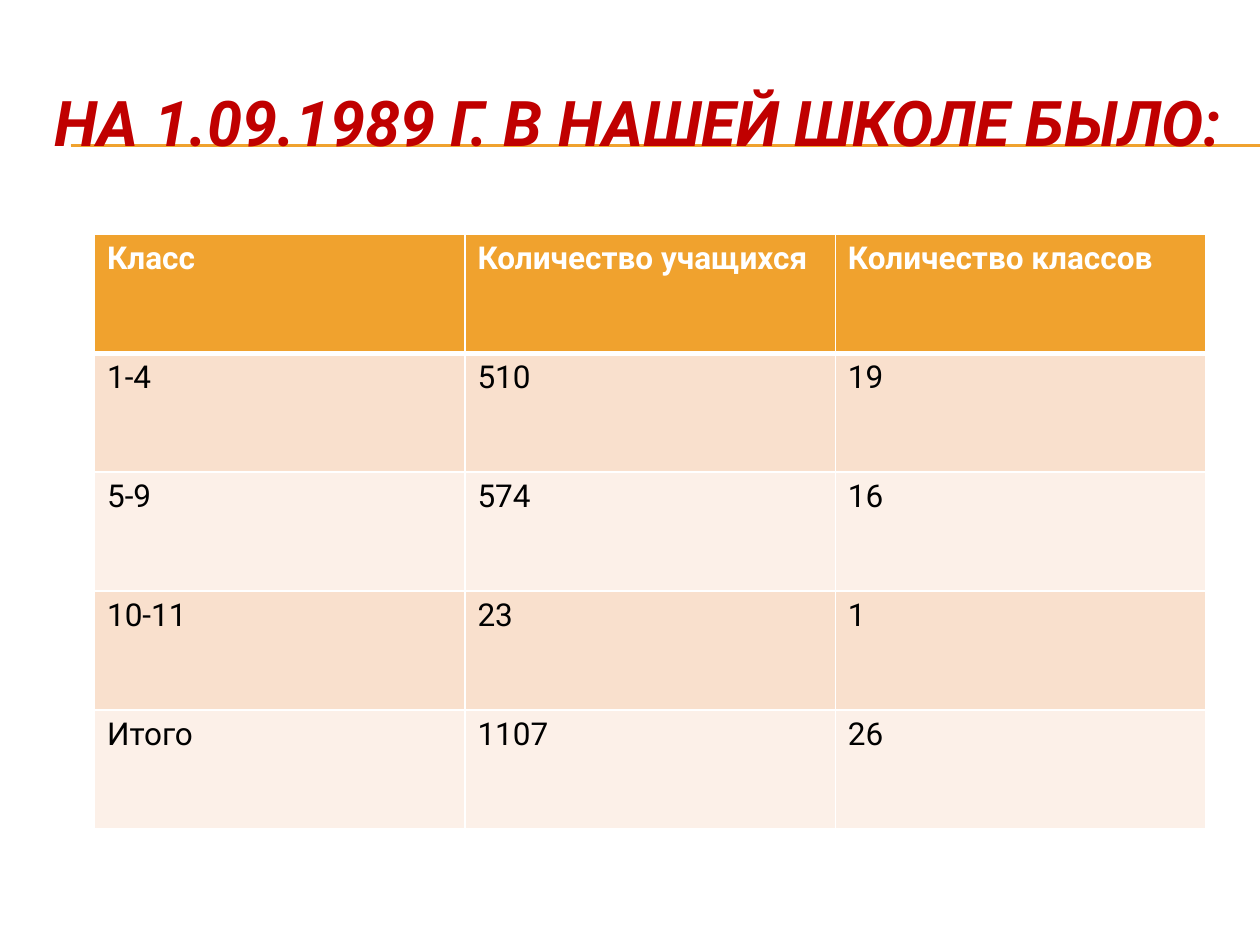
from lxml.etree import SubElement
from pptx import Presentation
from pptx.dml.color import RGBColor as RGB
from pptx.enum.shapes import MSO_CONNECTOR as CONN
from pptx.enum.text import MSO_ANCHOR as ANCHOR, PP_ALIGN as ALIGN
from pptx.oxml.ns import qn
from pptx.util import Inches, Pt

COLORS = {"accent": "F0A22E", "title": "C00000", "white": "FFFFFF",
          "text": "000000", "odd": "F9E0CD", "even": "FCF0E8"}
ROWS = [
    ("Класс", "Количество учащихся", "Количество классов"),
    ("1-4", "510", "19"),
    ("5-9", "574", "16"),
    ("10-11", "23", "1"),
    ("Итого", "1107", "26"),
]


def style_font(font, size, color, bold=False, italic=False):
    font.name, font.size = "Roboto", Pt(size)
    font.bold, font.italic = bold, italic
    font.color.rgb = RGB.from_string(COLORS[color])


def add_border(cell, side, width):
    """Draw a white line on one side (L, R, T or B); call before filling the cell."""
    ln = SubElement(cell._tc.get_or_add_tcPr(), qn(f"a:ln{side}"), w=str(Pt(width)))
    fill = SubElement(ln, qn("a:solidFill"))
    SubElement(fill, qn("a:srgbClr"), val=COLORS["white"])


prs = Presentation()
prs.slide_width, prs.slide_height = Inches(10), Inches(7.5)
s = prs.slides.add_slide(prs.slide_layouts[5])

# Double rule behind the title
for y in (1.15, 1.16):
    rule = s.shapes.add_connector(CONN.STRAIGHT, Inches(0.56), Inches(y),
                                  prs.slide_width, Inches(y))
    rule.line.color.rgb = RGB.from_string(COLORS["accent"])
    rule.line.width = Pt(0.75)
    SubElement(rule._element.spPr, qn("a:effectLst"))

# Title, moved in front of the rules
title = s.shapes.title
title.left, title.top = Inches(0.33), Inches(0.5)
title.width, title.height = Inches(9.5), Inches(0.92)
s.shapes._spTree.append(title._element)
tf = title.text_frame
tf.text = "НА 1.09.1989 Г. В НАШЕЙ ШКОЛЕ БЫЛО:"
tf.vertical_anchor = ANCHOR.MIDDLE
tf.margin_right = 0
p = tf.paragraphs[0]
p.alignment = ALIGN.LEFT
style_font(p.font, 36, "title", bold=True, italic=True)

# Table of classes
table = s.shapes.add_table(len(ROWS), len(ROWS[0]), Inches(0.75), Inches(1.86),
                           Inches(8.82), Inches(4.72)).table
for r, row in enumerate(ROWS):
    header = r == 0
    fill = "accent" if header else "odd" if r % 2 else "even"
    for c, text in enumerate(row):
        cell = table.cell(r, c)
        cell.text = text
        style_font(cell.text_frame.paragraphs[0].font, 18,
                   "white" if header else "text", bold=header)
        for side in "LRTB":
            heavy = (header and side == "B") or (r == 1 and side == "T")
            add_border(cell, side, 3 if heavy else 1)
        cell.fill.solid()
        cell.fill.fore_color.rgb = RGB.from_string(COLORS[fill])

prs.save("out.pptx")
